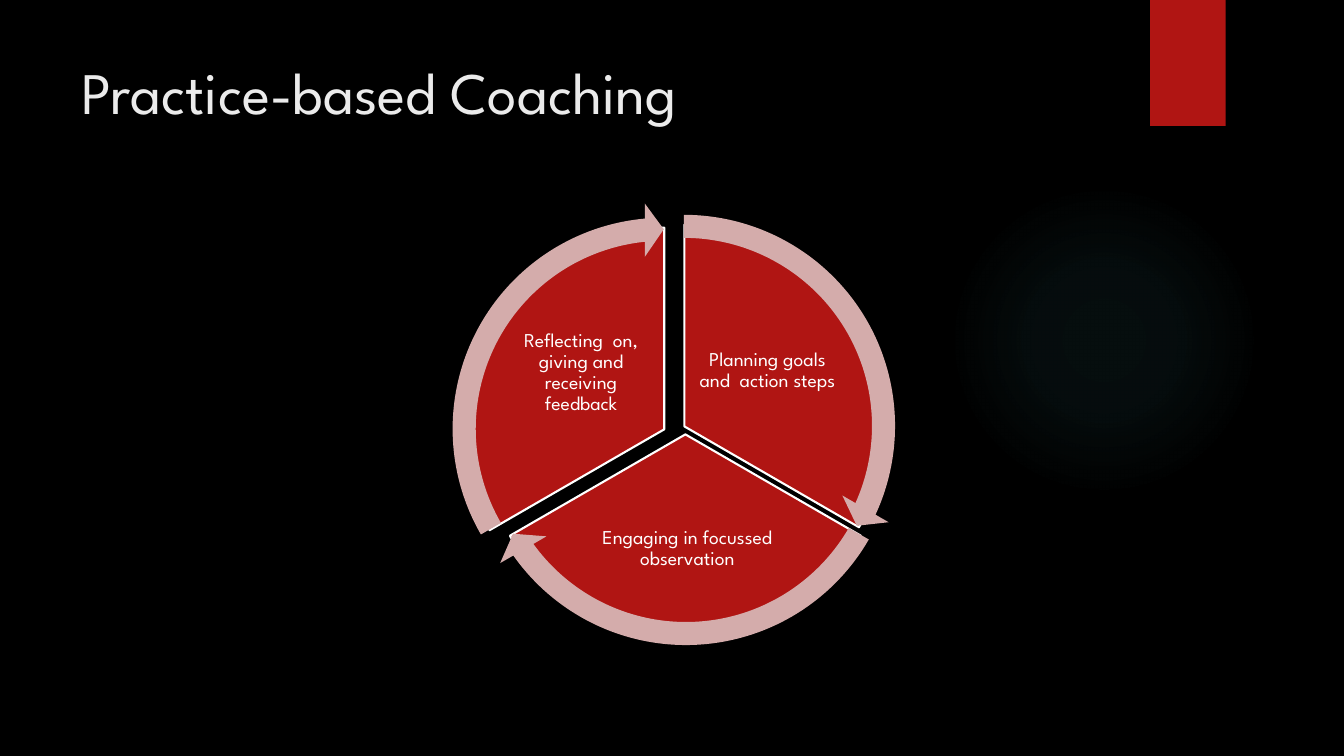
"""Build the Practice-based Coaching slide: a three-part cycle with arrows."""
from dataclasses import dataclass

from pptx import Presentation
from pptx.dml.color import RGBColor
from pptx.enum.shapes import MSO_SHAPE
from pptx.enum.text import MSO_ANCHOR, PP_ALIGN
from pptx.oxml import parse_xml
from pptx.oxml.ns import nsdecls
from pptx.util import Pt

PIE, ARROW = MSO_SHAPE.PIE, MSO_SHAPE.CIRCULAR_ARROW
OVAL, RECTANGLE = MSO_SHAPE.OVAL, MSO_SHAPE.RECTANGLE
TOP, MIDDLE = MSO_ANCHOR.TOP, MSO_ANCHOR.MIDDLE
LEFT, CENTER = PP_ALIGN.LEFT, PP_ALIGN.CENTER


@dataclass(frozen=True)
class Theme:
    """Colours and type of the slide."""
    background: str = "000000"
    glow: str = "50B9C1"
    accent: str = "B01513"
    arrow: str = "D4ACAB"
    outline: str = "FFFFFF"
    title: str = "EBEBEB"
    label: str = "FFFFFF"
    font: str = "League Spartan"
    title_size: int = 42
    label_size: int = 14


THEME = Theme()


def add_filled(shapes, kind, box, color, adjustments=()):
    """Add a borderless, shadowless shape in one colour."""
    shape = shapes.add_shape(kind, *map(Pt, box))
    shape.shadow.inherit = False
    shape.fill.solid()
    shape.fill.fore_color.rgb = RGBColor.from_string(color)
    shape.line.fill.background()
    for index, value in enumerate(adjustments):
        shape.adjustments[index] = value
    return shape


def write_text(shape, text, color, size, frame_format, paragraph_format):
    """Fill a shape's text frame with one formatted paragraph."""
    frame = shape.text_frame
    frame.text = text
    paragraph = frame.paragraphs[0]
    font = paragraph.runs[0].font
    font.color.rgb = RGBColor.from_string(color)
    font_format = {"name": THEME.font, "size": Pt(size)}
    for target, values in ((frame, frame_format), (paragraph, paragraph_format), (font, font_format)):
        for name, value in values.items():
            setattr(target, name, value)


presentation = Presentation()
presentation.slide_width, presentation.slide_height = Pt(960), Pt(540)
slide = presentation.slides.add_slide(presentation.slide_layouts[5])
slide.background.fill.solid()
slide.background.fill.fore_color.rgb = RGBColor.from_string(THEME.background)

glow = add_filled(slide.shapes, OVAL, (677.5, 131.8, 221.8, 221.8), THEME.glow)
stops = "".join(
    f'<a:gs pos="{position * 1000}"><a:srgbClr val="{THEME.glow}">'
    f'<a:alpha val="{alpha * 1000}"/></a:srgbClr></a:gs>'
    for position, alpha in ((0, 7), (36, 6), (69, 0))
)
gradient = parse_xml(
    f'<a:gradFill {nsdecls("a")}><a:gsLst>{stops}</a:gsLst><a:path path="circle">'
    '<a:fillToRect l="50000" t="50000" r="50000" b="50000"/></a:path></a:gradFill>'
)
solid = glow.fill._xPr.solidFill if hasattr(glow.fill._xPr, "solidFill") else glow.fill._xPr.eg_fillProperties
solid.getparent().replace(solid, gradient)

add_filled(slide.shapes, RECTANGLE, (821.5, 0, 54, 90), THEME.accent)

title = slide.shapes.title
title.left, title.top, title.width, title.height = map(Pt, (51.1, 36, 740.9, 110.2))
write_text(title, "Practice-based Coaching", THEME.title, THEME.title_size,
           {"vertical_anchor": TOP, "word_wrap": True}, {"alignment": LEFT})

label_frame = {"vertical_anchor": MIDDLE, "word_wrap": True}
label_frame.update({f"margin_{side}": Pt(1.4) for side in ("left", "top", "right", "bottom")})
label_paragraph = {"alignment": CENTER, "line_spacing": 0.9, "space_after": Pt(4.9)}

steps = [
    ("Planning goals and  action steps", 162, 18,
     (344.9, 160.6, 288, 288), (496.8, 221.8, 103, 85.7), (326.9, 142.6)),
    ("Engaging in focussed observation", 18, 90,
     (345.6, 163.4, 288, 293.8), (414, 353.5, 154.1, 77), (328.3, 148.3)),
    ("Reflecting  on, giving and receiving feedback", 90, 162,
     (330.5, 162.7, 288, 288), (363.6, 223.2, 103, 85.7), (312.5, 144.7)),
]
arrow_size, arrow_thickness, head_angle, head_width = 323.3, 0.051, 3.275, 0.059

cycle = slide.shapes.add_group_shape().shapes
for text, start, end, pie_box, label_box, arrow_corner in steps:
    pie = add_filled(cycle, PIE, pie_box, THEME.accent, (start, end))
    pie.line.color.rgb = RGBColor.from_string(THEME.outline)
    pie.line.width = Pt(1.5)
    label = cycle.add_textbox(*map(Pt, label_box))
    write_text(label, text, THEME.label, THEME.label_size, label_frame, label_paragraph)

for text, start, end, pie_box, label_box, arrow_corner in steps:
    add_filled(cycle, ARROW, (*arrow_corner, arrow_size, arrow_size), THEME.arrow,
               (arrow_thickness, head_angle, end - head_angle, start, head_width))

presentation.save("out.pptx")
